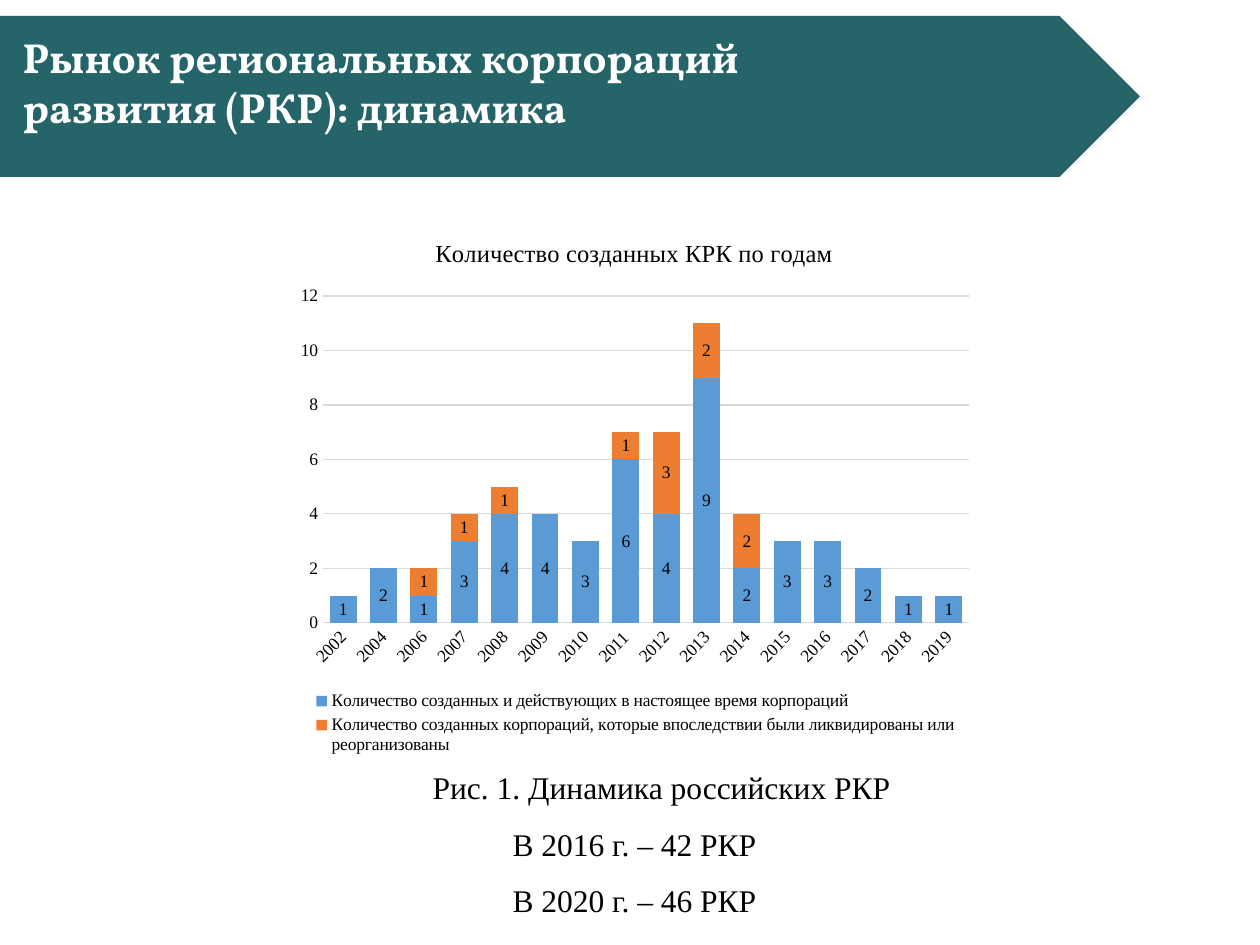
from pptx import Presentation
from pptx.chart.data import CategoryChartData
from pptx.dml.color import RGBColor
from pptx.enum.chart import XL_CHART_TYPE, XL_LABEL_POSITION, XL_LEGEND_POSITION, XL_TICK_MARK
from pptx.enum.shapes import MSO_SHAPE
from pptx.enum.text import MSO_ANCHOR, MSO_AUTO_SIZE, PP_ALIGN
from pptx.oxml import parse_xml
from pptx.oxml.ns import nsdecls, qn
from pptx.util import Emu, Pt

PX = 914400 / 126
TITLE_ONLY = 5
STACKED = XL_CHART_TYPE.COLUMN_STACKED
CENTER_LABEL = XL_LABEL_POSITION.CENTER
LEGEND_BOTTOM = XL_LEGEND_POSITION.BOTTOM
NO_TICK = XL_TICK_MARK.NONE
BANNER = MSO_SHAPE.PENTAGON
TOP = MSO_ANCHOR.TOP
FIT_SHAPE = MSO_AUTO_SIZE.SHAPE_TO_FIT_TEXT
LEFT, CENTER = PP_ALIGN.LEFT, PP_ALIGN.CENTER

COLORS = {
    "banner": "256569", "white": "FFFFFF", "black": "000000",
    "grid": "D9D9D9", "active": "5B9BD5", "closed": "ED7D31",
}
SERIF = "Times New Roman"
TITLE_FONT = {"name": "Vollkorn", "size": Pt(24), "bold": True}
CAPTION_FONT = {"name": SERIF, "size": Pt(18)}
CHART_FONT = {"name": SERIF, "size": Pt(10), "bold": False}
CHART_TITLE_FONT = {"name": SERIF, "size": Pt(14), "bold": False}

CHART_BOX = (286, 214, 697, 546)
LABEL_ANGLE = -45
YEARS = ["2002", "2004"] + [str(year) for year in range(2006, 2020)]
SERIES = [
    ("Количество созданных и действующих в настоящее время корпораций", "active",
     [1, 2, 1, 3, 4, 4, 3, 6, 4, 9, 2, 3, 3, 2, 1, 1]),
    ("Количество созданных корпораций, которые впоследствии были ликвидированы "
     "или реорганизованы", "closed",
     [None, None, 1, 1, 1, None, None, 1, 3, 2, 2] + [None] * 5),
]


def px(length):
    return Emu(round(length * PX))


def box(*lengths):
    return [px(length) for length in lengths]


def rgb(name):
    return RGBColor.from_string(COLORS[name])


def set_font(font, values, color):
    for attribute, value in values.items():
        setattr(font, attribute, value)
    font.color.rgb = rgb(color)


def write_lines(frame, lines, font, color, align, spacing):
    frame.text = "\n".join(lines)
    for paragraph in frame.paragraphs:
        paragraph.alignment = align
        paragraph.line_spacing = spacing
        paragraph.space_before = Pt(0)
        set_font(paragraph.runs[0].font, font, color)


def add_banner(slide):
    banner = slide.shapes.add_shape(BANNER, *box(0, 16, 1140, 161))
    banner.shadow.inherit = False
    banner.fill.solid()
    banner.fill.fore_color.rgb = rgb("banner")
    banner.line.fill.background()
    # Keep the banner behind the title
    slide.shapes.title._element.addprevious(banner._element)


def fill_title(slide):
    title = slide.shapes.title
    title.left, title.top, title.width, title.height = box(10, 25, 755, 115)
    frame = title.text_frame
    write_lines(frame, ["Рынок региональных корпораций", "развития (РКР): динамика"],
                TITLE_FONT, "white", LEFT, 1.0)
    frame.word_wrap = False
    frame.auto_size = FIT_SHAPE
    frame.vertical_anchor = TOP


def add_caption(slide):
    frame = slide.shapes.add_textbox(*box(38, 743, 1193, 178)).text_frame
    frame.word_wrap = True
    frame.auto_size = FIT_SHAPE
    write_lines(frame, ["Рис. 1. Динамика российских РКР ", "В 2016 г. – 42 РКР",
                        "В 2020 г. – 46 РКР"], CAPTION_FONT, "black", CENTER, 1.5)
    frame.paragraphs[0]._p.get_or_add_pPr().set("indent", str(px(62)))


def place_part(element, left, top, width=None, height=None, inner=False):
    """Place a chart part by slide px, as fractions of the chart box."""
    chart_left, chart_top, chart_width, chart_height = CHART_BOX
    fractions = {"x": (left - chart_left) / chart_width, "y": (top - chart_top) / chart_height}
    if width:
        fractions.update(w=width / chart_width, h=height / chart_height)
    target = '<c:layoutTarget val="inner"/>' if inner else ""
    modes = '<c:xMode val="edge"/><c:yMode val="edge"/>'
    values = "".join(f'<c:{key} val="{value:.4f}"/>' for key, value in fractions.items())
    layout = parse_xml(f'<c:layout {nsdecls("c")}><c:manualLayout>{target}{modes}{values}'
                       '</c:manualLayout></c:layout>')
    previous = element.find(qn("c:layout"))
    if previous is not None:
        element.remove(previous)
    overlay = element.find(qn("c:overlay"))
    if overlay is None:
        element.insert(0, layout)
    else:
        overlay.addprevious(layout)


def format_axes(chart):
    category_axis, value_axis = chart.category_axis, chart.value_axis
    for axis in (category_axis, value_axis):
        axis.major_tick_mark = axis.minor_tick_mark = NO_TICK
        set_font(axis.tick_labels.font, CHART_FONT, "black")
    # Slanted year labels
    body = category_axis._element.find(qn("c:txPr")).find(qn("a:bodyPr"))
    body.set("rot", str(LABEL_ANGLE * 60000))
    body.set("vert", "horz")
    value_axis.minimum_scale, value_axis.maximum_scale, value_axis.major_unit = 0, 12, 2
    value_axis.format.line.fill.background()
    for line in (category_axis.format.line, value_axis.major_gridlines.format.line):
        line.color.rgb = rgb("grid")
        line.width = Pt(0.75)


def format_series(plot):
    plot.gap_width, plot.overlap = 50, 100
    for series, (_, color, _) in zip(plot.series, SERIES):
        series.format.fill.solid()
        series.format.fill.fore_color.rgb = rgb(color)
        labels = series.data_labels
        labels.show_value = True
        labels.position = CENTER_LABEL
        set_font(labels.font, CHART_FONT, "black")


def add_chart(slide):
    data = CategoryChartData()
    data.categories = YEARS
    for name, _, values in SERIES:
        data.add_series(name, values)
    chart = slide.shapes.add_chart(STACKED, *box(*CHART_BOX), data).chart
    set_font(chart.font, CHART_FONT, "black")
    format_axes(chart)
    format_series(chart.plots[0])

    # Chart title and legend
    chart.has_title = True
    write_lines(chart.chart_title.text_frame, ["Количество созданных КРК по годам"],
                CHART_TITLE_FONT, "black", CENTER, 1.0)
    chart.chart_title.include_in_layout = False
    chart.has_legend = True
    chart.legend.position = LEGEND_BOTTOM
    chart.legend.include_in_layout = False
    set_font(chart.legend.font, CHART_FONT, "black")

    # Positions inside the chart
    place_part(chart.chart_title._element, 431, 233)
    place_part(chart.legend._element, 305, 687, 660, 72)
    plot_area = chart._chartSpace.chart.plotArea
    place_part(plot_area, 323, 296, 646, 327, inner=True)


def main():
    presentation = Presentation()
    presentation.slide_width, presentation.slide_height = px(1260), px(945)
    slide = presentation.slides.add_slide(presentation.slide_layouts[TITLE_ONLY])
    add_banner(slide)
    fill_title(slide)
    add_caption(slide)
    add_chart(slide)
    presentation.save("out.pptx")


if __name__ == "__main__":
    main()
